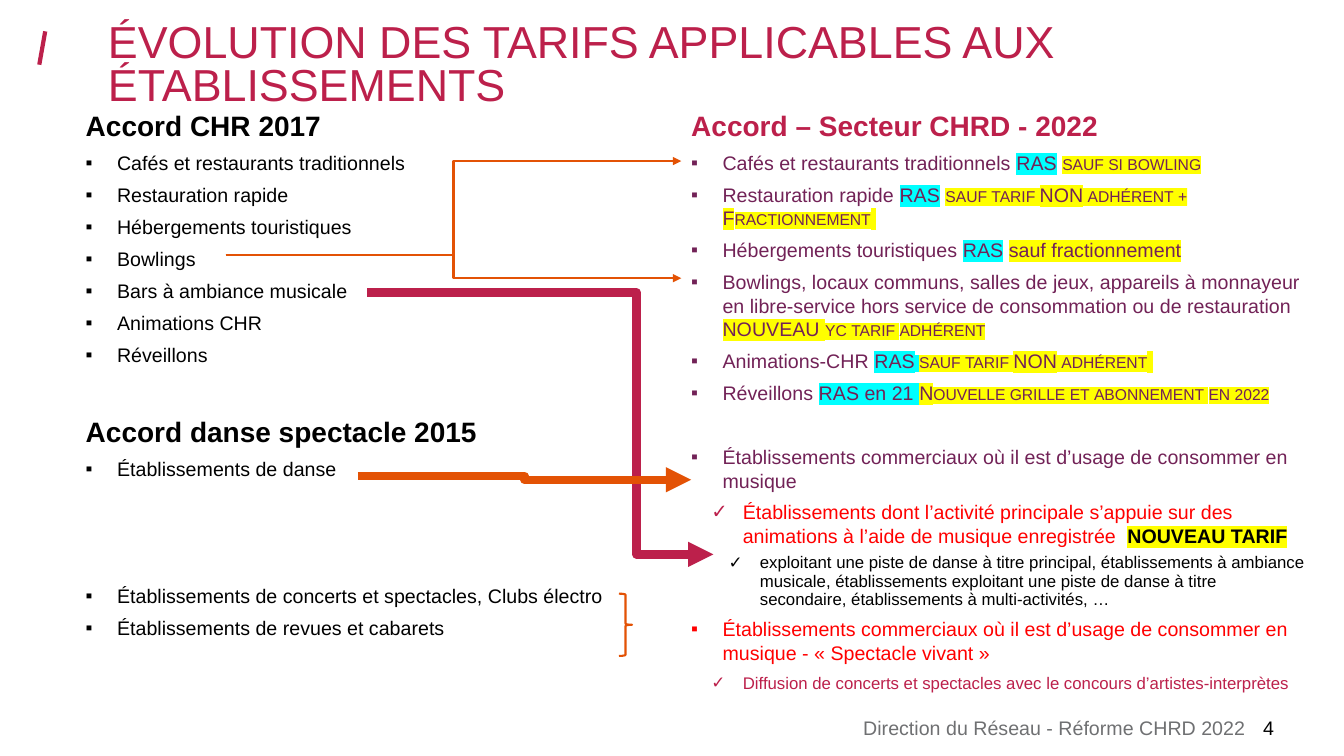
from lxml.etree import SubElement
from pptx import Presentation
from pptx.dml.color import RGBColor
from pptx.enum.shapes import MSO_CONNECTOR, MSO_SHAPE
from pptx.enum.text import MSO_ANCHOR, MSO_AUTO_SIZE, PP_ALIGN
from pptx.oxml.ns import qn
from pptx.util import Cm, Pt

BLACK = RGBColor(0x00, 0x00, 0x00)
GREY = RGBColor(0x6F, 0x70, 0x72)
ROSE = RGBColor(0xBC, 0x20, 0x4B)
PLUM = RGBColor(0x72, 0x22, 0x57)
RED = RGBColor(0xFF, 0x00, 0x00)
ORANGE = RGBColor(0xE3, 0x52, 0x05)
CYAN = RGBColor(0x00, 0xFF, 0xFF)
YELLOW = RGBColor(0xFF, 0xFF, 0x00)
GAP = 22.75  # height in points of one skipped list line


def write(para, text, size=14, color=BLACK, bold=False, mark=None, small=False):
    run = para.add_run()
    run.text = text
    font = run.font
    font.size, font.bold, font.name = Pt(size), bold, "Arial"
    font.color.rgb = color
    props = run._r.get_or_add_rPr()
    if small:
        props.set("cap", "small")
    if mark is not None:
        light = SubElement(props, qn("a:highlight"))
        SubElement(light, qn("a:srgbClr"), val=str(mark))
        props.find(qn("a:solidFill")).addnext(light)


def start(frame, level=0, left=0, sign=None, tint=None, before=6):
    para = frame.paragraphs[0]
    if para.runs:
        para = frame.add_paragraph()
        para.space_before = Pt(before)
    else:
        para.space_before = Pt(0)
    para.level = level
    para.line_spacing = 1.0
    para.space_after = Pt(0)
    props = para._p.get_or_add_pPr()
    props.set("marL", str(Cm(left)))
    props.set("indent", str(Cm(-0.79 if sign else 0)))
    if tint is not None:
        SubElement(SubElement(props, qn("a:buClr")), qn("a:srgbClr"), val=str(tint))
    if sign:
        SubElement(props, qn("a:buFont"), typeface="Arial")
        SubElement(props, qn("a:buChar"), char=sign)
    else:
        SubElement(props, qn("a:buNone"))
    para.alignment = PP_ALIGN.LEFT
    return para


deck = Presentation()
deck.slide_width, deck.slide_height = Cm(33.87), Cm(19.05)
slide = deck.slides.add_slide(deck.slide_layouts[3])
shapes = slide.shapes

# Text areas: title, two lists, footer and page number
title, old, new = slide.placeholders
foot = shapes.add_textbox(0, 0, 0, 0)
page = shapes.add_textbox(0, 0, 0, 0)
for box, x, y, w, h in [
    (title, 2.72, 0.61, 30.56, 1.93),
    (old, 2.16, 2.74, 13.89, 11.68),
    (new, 17.42, 2.74, 15.52, 15.29),
    (foot, 18.39, 18.03, 13, 0.61),
    (page, 31.83, 18.03, 1.12, 0.61),
]:
    box.left, box.top, box.width, box.height = Cm(x), Cm(y), Cm(w), Cm(h)
    frame = box.text_frame
    frame.margin_left = frame.margin_right = frame.margin_top = frame.margin_bottom = 0
    frame.word_wrap = True
    frame.auto_size = MSO_AUTO_SIZE.NONE
    frame.vertical_anchor = MSO_ANCHOR.TOP

head = start(title.text_frame)
head.line_spacing = 0.8
write(head, "ÉVOLUTION DES TARIFS APPLICABLES AUX ÉTABLISSEMENTS", size=32, color=ROSE)
note = start(foot.text_frame)
note.alignment = PP_ALIGN.RIGHT
write(note, "Direction du Réseau - Réforme CHRD 2022", color=GREY)
write(start(page.text_frame), "4")

# Former agreements: heading, items and lines skipped before each item
for name, items in [
    ("Accord CHR 2017", [
        ("Cafés et restaurants traditionnels", 0),
        ("Restauration rapide", 0),
        ("Hébergements touristiques", 0),
        ("Bowlings", 0),
        ("Bars à ambiance musicale", 0),
        ("Animations CHR", 0),
        ("Réveillons", 0),
    ]),
    ("Accord danse spectacle 2015", [
        ("Établissements de danse", 0),
        ("Établissements de concerts et spectacles, Clubs électro", 3),
        ("Établissements de revues et cabarets", 0),
    ]),
]:
    write(start(old.text_frame, before=12 + GAP), name, size=20, bold=True)
    for text, skip in items:
        para = start(old.text_frame, 1, 0.79, "▪", before=6 + skip * GAP)
        write(para, text)

# New agreement
write(start(new.text_frame, 1), "Accord – Secteur CHRD - 2022", size=20, color=ROSE, bold=True)
plain = {}
same = {"mark": CYAN}
note = {"mark": YELLOW}
caps = {"mark": YELLOW, "small": True}
for runs in [
    [("Cafés et restaurants traditionnels ", plain), ("RAS", same), (" ", plain),
     ("sauf si bowling", caps), (" ", caps)][:4],
    [("Restauration rapide ", plain), ("RAS", same), (" ", plain),
     ("sauf tarif NON adhérent + Fractionnement", caps), (" ", note)],
    [("Hébergements touristiques ", plain), ("RAS", same), (" ", plain),
     ("sauf fractionnement", note)],
    [("Bowlings, locaux communs, salles de jeux, appareils à monnayeur en libre-service "
      "hors service de consommation ou de restauration ", plain),
     ("NOUVEAU ", note), ("yc tarif adhérent", caps)],
    [("Animations-CHR ", plain), ("RAS", same), (" ", {"mark": CYAN, "small": True}),
     ("sauf tarif NON adhérent", caps), (" ", note)],
    [("Réveillons ", plain), ("RAS en 21 ", same),
     ("Nouvelle grille et abonnement en 2022", caps)],
]:
    para = start(new.text_frame, 1, 0.79, "▪")
    for text, style in runs:
        write(para, text, color=PLUM, **style)

# Venues where music is consumed
usage = "Établissements commerciaux où il est d’usage de consommer en musique"
para = start(new.text_frame, 1, 0.79, "▪", before=6 + GAP)
write(para, usage, color=PLUM)
para = start(new.text_frame, 4, 1.3, "✓", ROSE)
write(para, "Établissements dont l’activité principale s’appuie sur des animations "
      "à l’aide de musique enregistrée  ", color=RED)
write(para, "NOUVEAU TARIF", bold=True, mark=YELLOW)
para = start(new.text_frame, 5, 1.73, "✓", before=5)
para.line_spacing = 0.9
write(para, "exploitant une piste de danse à titre principal, établissements à ambiance "
      "musicale, établissements exploitant une piste de danse à titre secondaire, "
      "établissements à multi-activités, …", size=12)
para = start(new.text_frame, 1, 0.79, "▪")
write(para, usage + " - «\u00a0Spectacle vivant\u00a0»", color=RED)
para = start(new.text_frame, 4, 1.3, "✓", ROSE)
write(para, "Diffusion de concerts et spectacles avec le concours d’artistes-interprètes",
      size=12, color=ROSE)

# Title slash and arrows from old items to new ones; bend is the elbow's place
for x1, y1, x2, y2, color, width, bend in [
    (0.99, 1.63, 1.14, 0.79, ROSE, 3, None),
    (5.69, 6.43, 17.17, 7.01, ORANGE, 1.5, 50000),
    (9.25, 7.37, 17.98, 13.97, ROSE, 6, 77800),
    (5.69, 6.43, 17.17, 4.06, ORANGE, 1.5, 50000),
    (9.02, 11.99, 17.42, 12.09, ORANGE, 6, 50000),
]:
    kind = MSO_CONNECTOR.ELBOW if bend else MSO_CONNECTOR.STRAIGHT
    link = shapes.add_connector(kind, Cm(x1), Cm(y1), Cm(x2), Cm(y2))
    link.line.color.rgb = color
    link.line.width = Pt(width)
    props = link._element.spPr
    SubElement(props, qn("a:effectLst"))
    if bend:
        SubElement(props.find(qn("a:ln")), qn("a:tailEnd"), type="triangle")
        guides = props.find(qn("a:prstGeom")).get_or_add_avLst()
        SubElement(guides, qn("a:gd"), name="adj1", fmla=f"val {bend}")

# Brace grouping the last two old items
brace = shapes.add_shape(MSO_SHAPE.RIGHT_BRACE, Cm(15.6), Cm(14.96), Cm(0.33), Cm(1.57))
brace.shadow.inherit = False
brace.fill.background()
brace.line.color.rgb = ORANGE
brace.line.width = Pt(1.5)

deck.save("out.pptx")
